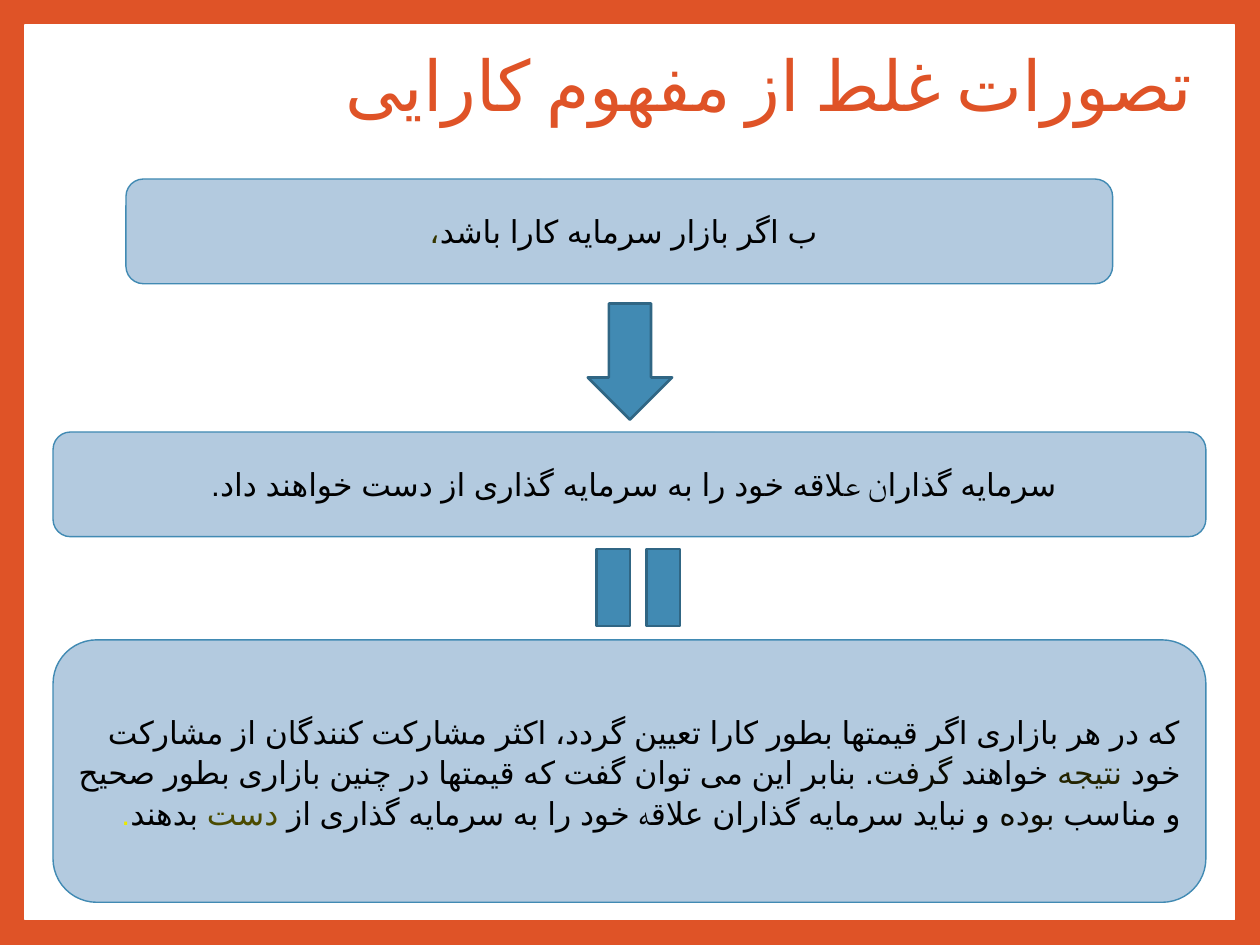
import pptx
import pptx.util
import pptx.dml.color
import pptx.enum.shapes
import pptx.enum.text
import pptx.oxml.ns
import lxml.etree

Cm = pptx.util.Cm
Pt = pptx.util.Pt
Kind = pptx.enum.shapes.MSO_SHAPE
Align = pptx.enum.text.PP_ALIGN
Anchor = pptx.enum.text.MSO_ANCHOR

ORANGE = "DF5327"
WHITE = "FFFFFF"
BLACK = "000000"
PALE = "B3CADF"
BLUE = "418AB3"
NAVY = "306684"
SERIF = "Times New Roman"


def paint(color, code):
    color.rgb = pptx.dml.color.RGBColor.from_string(code)


def draw(slide, kind, area, fill, line, width):
    shape = slide.shapes.add_shape(kind, *map(Cm, area))
    shape.shadow.inherit = False
    shape.fill.solid()
    paint(shape.fill.fore_color, fill)
    paint(shape.line.color, line)
    shape.line.width = Pt(width)
    return shape


def style(run, code, font):
    paint(run.font.color, code)
    run.font.name = font
    props = run._r.get_or_add_rPr()
    props.set("lang", "fa-IR")
    script = lxml.etree.SubElement(props, pptx.oxml.ns.qn("a:cs"))
    script.set("typeface", font)


def write(shape, parts, size, align):
    frame = shape.text_frame
    frame.word_wrap = True
    frame.vertical_anchor = Anchor.MIDDLE
    para = frame.paragraphs[0]
    para.alignment = align
    para.font.size = Pt(size)
    para._p.get_or_add_pPr().set("rtl", "1")
    for text, code, font in parts:
        run = para.add_run()
        run.text = text
        style(run, code, font)
    return para


def title(slide, text):
    box = slide.shapes.add_textbox(Cm(4.95), Cm(0.43), Cm(19.35), Cm(2.74))
    para = write(box, [(text, ORANGE, "Cabin")], 40, Align.RIGHT)
    para.line_spacing = 0.9


def panel(slide, area, parts, align=Align.CENTER):
    shape = draw(slide, Kind.FLOWCHART_ALTERNATE_PROCESS, area, PALE, BLUE, 0.79)
    return write(shape, parts, 18, align)


def sign(slide, kind, area, turn=0):
    shape = draw(slide, kind, area, BLUE, NAVY, 1.5)
    shape.rotation = turn


def part(text, code=BLACK, font="Arial"):
    return text, code, font


def main():
    deck = pptx.Presentation()
    deck.slide_width, deck.slide_height = Cm(25.4), Cm(19.05)
    slide = deck.slides.add_slide(deck.slide_layouts[6])
    back = slide.background.fill
    back.solid()
    paint(back.fore_color, ORANGE)
    draw(slide, Kind.RECTANGLE, (0.51, 0.51, 24.38, 18.03), WHITE, WHITE, 1)

    title(slide, "تصورات غلط از مفهوم کارایی")
    panel(slide, (2.54, 3.61, 19.89, 2.11), [
        part("ب اگر بازار سرمایه کارا باشد"),
        part("، ", "363600"),
    ])
    sign(slide, Kind.DOWN_ARROW, (11.85, 6.12, 1.7, 2.34))
    panel(slide, (1.07, 8.71, 23.24, 2.11), [
        part("سرمایه گذارا"),
        part("ن ع", font=SERIF),
        part("لاقه خود را به سرمایه گذاری از دست خواهند داد. "),
    ])
    para = panel(slide, (1.07, 12.9, 23.24, 5.29), [
        part("که در هر بازاری اگر قیمتها بطور کارا تعیین گردد، اکثر مشارکت کنندگان از مشارکت خود "),
        part("نتیجه ", "242400"),
        part("خواهند "),
        part("گرفت", "0A0A00"),
        part(". بنابر این می توان گفت که قیمتها در چنین بازاری بطور صحیح و مناسب "),
        part("بوده ", "0B0B00"),
        part("و نباید سرمایه گذاران علاق"),
        part("ه ", font=SERIF),
        part("خود را به سرمایه گذاری از "),
        part("دست ", "4B4B00"),
        part("بدهند"),
        part(". ", "EAEA00"),
    ], Align.RIGHT)
    para.line_spacing = 1.07
    para.space_before = Pt(0.9)
    para.space_after = Pt(8)
    sign(slide, Kind.MATH_EQUAL, (11.81, 10.41, 2.11, 2.87), 90)

    deck.save("out.pptx")


if __name__ == "__main__":
    main()
